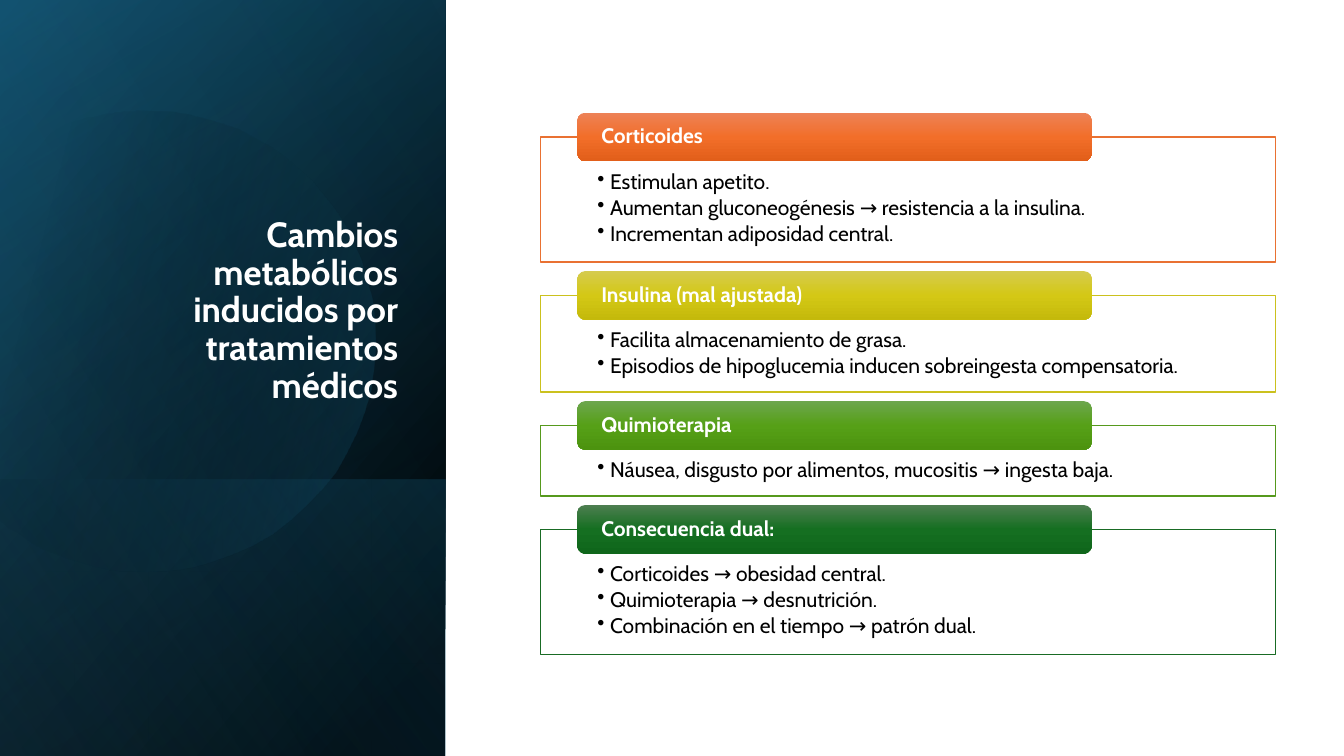
import math
from dataclasses import dataclass

from lxml import etree
from pptx import Presentation
from pptx import util as u
from pptx.dml.color import RGBColor
from pptx.enum import shapes, text
from pptx.oxml.ns import qn

Pt = u.Pt
FONT = "Cabin"
COLORS = {
    "white": "FFFFFF", "black": "000000", "navy": "104862",
    "teal": "156082", "sky": "46B1E1",
}


@dataclass
class Stop:
    pos: int
    color: str
    alpha: int = 100


@dataclass
class Panel:
    top: float
    height: float
    stops: list[Stop]
    angle: float


@dataclass
class Section:
    heading: str
    bullets: list[str]
    height: float
    line: str
    shades: tuple[str, str, str]


BLACK, TEAL = COLORS["black"], COLORS["teal"]
PANEL_W, SLIDE_H = 318.2, 540
PANELS = [
    Panel(0, SLIDE_H, [Stop(8, BLACK), Stop(100, COLORS["navy"])], 50),
    Panel(0, SLIDE_H, [Stop(0, BLACK, 0), Stop(99, TEAL, 46)], 30),
    Panel(342.7, 197.3, [Stop(2, TEAL, 29), Stop(100, BLACK, 30)], 130),
]
GLOW = Panel(0, SLIDE_H, [Stop(0, BLACK, 0), Stop(99, COLORS["sky"], 11)], 120)

# Disc outline in inches: a pair is a corner, a triple of pairs is a cubic curve
DISC_START = (1.49, 1.1)
DISC_STEPS = [
    ((2.46, 1.12), (3.35, 1.77), (3.63, 2.75)),
    ((3.98, 3.97), (3.28, 5.23), (2.07, 5.58)),
    ((1.31, 5.8), (0.53, 5.61), (-0.03, 5.14)),
    (-0.15, 5.03), (-0.15, 1.75), (0, 1.61),
    ((0.23, 1.42), (0.5, 1.28), (0.8, 1.19)),
    ((1.03, 1.13), (1.26, 1.1), DISC_START),
]
DISC_CENTER, DISC_ROT = (1.585, 3.345), 343.9

SECTIONS = [
    Section("Corticoides",
            ["Estimulan apetito.",
             "Aumentan gluconeogénesis → resistencia a la insulina.",
             "Incrementan adiposidad central."],
            89.3, "E97132", ("ED8257", "F26E29", "E25F1A")),
    Section("Insulina (mal ajustada)",
            ["Facilita almacenamiento de grasa.",
             "Episodios de hipoglucemia inducen sobreingesta compensatoria."],
            69.1, "CBC11E", ("D5CB4E", "D4C815", "C4B90B")),
    Section("Quimioterapia",
            ["Náusea, disgusto por alimentos, mucositis → ingesta baja."],
            50.4, "56991D", ("6DA64E", "56A017", "4C930F")),
    Section("Consecuencia dual:",
            ["Corticoides → obesidad central.",
             "Quimioterapia → desnutrición.",
             "Combinación en el tiempo → patrón dual."],
            89.3, "196B24", ("4D7E50", "156F21", "0F661B")),
]
FIRST_TOP, GAP = 97.9, 23.8


def set_gradient(sp, stops: list[Stop], angle: float) -> None:
    sp.fill.gradient()
    grad = sp.element.spPr.find(qn("a:gradFill"))
    gs_lst = grad.find(qn("a:gsLst"))
    for gs in list(gs_lst):
        gs_lst.remove(gs)
    for stop in stops:
        gs = etree.SubElement(gs_lst, qn("a:gs"), pos=str(stop.pos * 1000))
        clr = etree.SubElement(gs, qn("a:srgbClr"), val=stop.color)
        if stop.alpha < 100:
            etree.SubElement(clr, qn("a:alpha"), val=str(stop.alpha * 1000))
    grad.find(qn("a:lin")).set("ang", str(int(angle * 60000)))


def add_box(s, kind, x: float, y: float, w: float, h: float):
    sp = s.shapes.add_shape(kind, Pt(x), Pt(y), Pt(w), Pt(h))
    sp.shadow.inherit = False
    sp.line.fill.background()
    return sp


def add_panel(s, panel: Panel) -> None:
    # The rectangle lies on its side, so its width is the visible height
    cx, cy = PANEL_W / 2, panel.top + panel.height / 2
    sp = add_box(s, shapes.MSO_SHAPE.RECTANGLE, cx - panel.height / 2,
                 cy - PANEL_W / 2, panel.height, PANEL_W)
    sp.rotation = 90
    sp.element.spPr.xfrm.set("flipH", "1")
    set_gradient(sp, panel.stops, panel.angle)


def disc_points(samples: int = 16) -> list[tuple[float, float]]:
    pts = [DISC_START]
    for step in DISC_STEPS:
        if len(step) == 2:
            pts.append(step)
            continue
        ctrl = (pts[-1], *step)
        for i in range(1, samples + 1):
            t = i / samples
            wts = [math.comb(3, k) * t**k * (1 - t)**(3 - k) for k in range(4)]
            pts.append(tuple(sum(wt * c[axis] for wt, c in zip(wts, ctrl))
                             for axis in (0, 1)))
    return pts


def add_disc(s) -> None:
    # Turn the outline back, since the shape itself is rotated
    a = math.radians(-DISC_ROT)
    cx, cy = DISC_CENTER
    pts = [(72 * (cx + (x - cx) * math.cos(a) - (y - cy) * math.sin(a)),
            72 * (cy + (x - cx) * math.sin(a) + (y - cy) * math.cos(a)))
           for x, y in disc_points()]
    fb = s.shapes.build_freeform(*pts[0], scale=float(Pt(1)))
    fb.add_line_segments(pts[1:], close=True)
    sp = fb.convert_to_shape()
    sp.shadow.inherit = False
    sp.line.fill.background()
    sp.rotation = DISC_ROT
    set_gradient(sp, [Stop(29, BLACK, 0), Stop(100, TEAL, 43)], 30)


def write(sp, lines: list[str], *, size: float = 15, color: str = "white",
          bold: bool = False, align=text.PP_ALIGN.LEFT,
          anchor=text.MSO_ANCHOR.MIDDLE, insets=(7.2, 3.6, 7.2, 3.6),
          after: float = 0, bullet: bool = False) -> None:
    tf = sp.text_frame
    tf.word_wrap = True
    tf.auto_size = text.MSO_AUTO_SIZE.NONE
    tf.vertical_anchor = anchor
    (tf.margin_left, tf.margin_top,
     tf.margin_right, tf.margin_bottom) = map(Pt, insets)
    for i, line in enumerate(lines):
        p = tf.add_paragraph() if i else tf.paragraphs[0]
        p.alignment, p.line_spacing = align, 0.9
        p.space_before, p.space_after = Pt(0), Pt(after)
        if bullet:
            p.level = 1
            pPr = p._p.get_or_add_pPr()
            pPr.set("marL", str(Pt(9)))
            pPr.set("indent", str(-Pt(9)))
            etree.SubElement(pPr, qn("a:buChar"), char="•")
        r = p.add_run()
        r.text = line
        r.font.name, r.font.size, r.font.bold = FONT, Pt(size), bold
        r.font.color.rgb = RGBColor.from_string(COLORS[color])


def add_section(s, sec: Section, top: float) -> None:
    body = add_box(s, shapes.MSO_SHAPE.RECTANGLE, 386, top, 525, sec.height)
    body.fill.solid()
    body.fill.fore_color.rgb = RGBColor.from_string(COLORS["white"])
    body.line.color.rgb = RGBColor.from_string(sec.line)
    body.line.width = Pt(1)
    write(body, sec.bullets, color="black", anchor=text.MSO_ANCHOR.TOP,
          insets=(40.8, 24.5, 40.8, 8.6), after=2.25, bullet=True)
    head = add_box(s, shapes.MSO_SHAPE.ROUNDED_RECTANGLE,
                   412.4, top - 17.4, 367.4, 34.8)
    set_gradient(head, [Stop(50 * i, c) for i, c in enumerate(sec.shades)], 90)
    write(head, [sec.heading], bold=True, insets=(15.4, 0, 15.4, 0))


def main() -> None:
    prs = Presentation()
    prs.slide_width, prs.slide_height = Pt(960), Pt(SLIDE_H)
    s = prs.slides.add_slide(prs.slide_layouts[5])

    # Dark side panel
    for panel in PANELS:
        add_panel(s, panel)
    add_disc(s)
    add_panel(s, GLOW)

    # Title, raised above the panel
    title = s.shapes.title
    title.element.getparent().append(title.element)
    title.left, title.top, title.width, title.height = map(
        Pt, (46, 132.5, 245.5, 188.6))
    write(title, ["Cambios metabólicos inducidos por tratamientos médicos"],
          size=25, bold=True, align=text.PP_ALIGN.RIGHT,
          anchor=text.MSO_ANCHOR.BOTTOM, insets=(7.2, 3.6, 7.2, 31))

    # Treatment sections
    top = FIRST_TOP
    for sec in SECTIONS:
        add_section(s, sec, top)
        top += sec.height + GAP

    prs.save("out.pptx")


if __name__ == "__main__":
    main()
